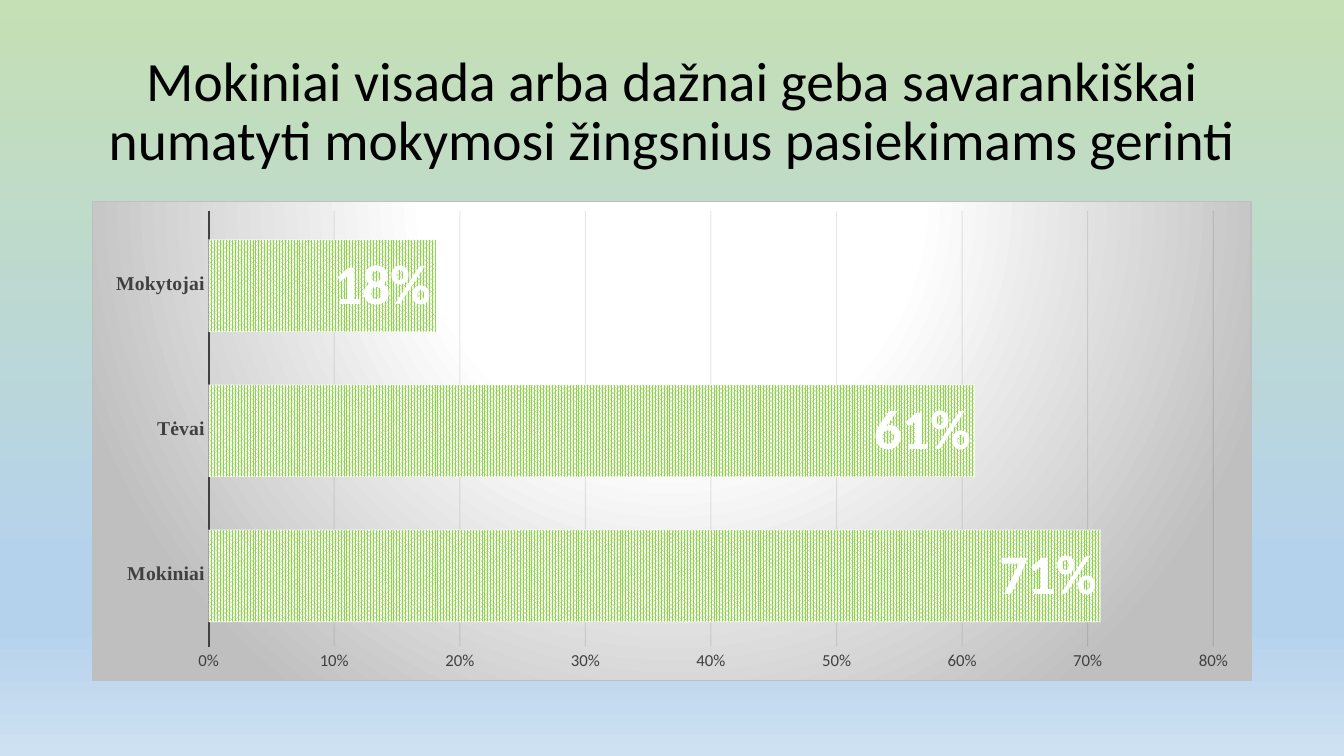
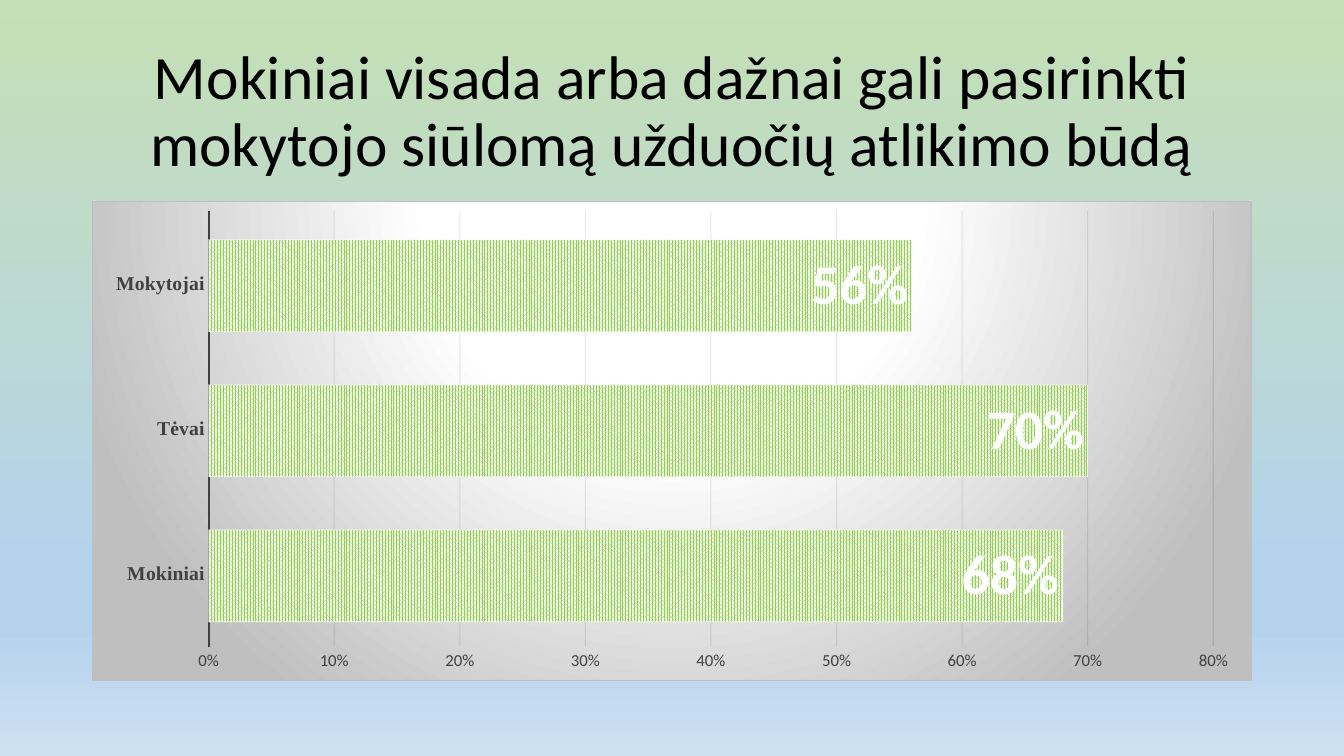
"""Builds two survey slides, each with a title and a bar chart of answers."""
from pptx import Presentation
from pptx import util as u
from pptx.chart.data import CategoryChartData
from pptx.dml.color import RGBColor
from pptx.enum import chart as charts, dml, text
from pptx.oxml import ns, parse_xml

BLACK = RGBColor(0x00, 0x00, 0x00)
WHITE = RGBColor(0xFF, 0xFF, 0xFF)
DARK = RGBColor(0x40, 0x40, 0x40)
GRID = RGBColor(0x0D, 0x0D, 0x0D)
SILVER = RGBColor(0xBF, 0xBF, 0xBF)
LIME = RGBColor(0x92, 0xD0, 0x50)
ORANGE = RGBColor(0xED, 0x7D, 0x31)
GREY = RGBColor(0xA5, 0xA5, 0xA5)
PALE_GREEN = RGBColor(0xC5, 0xE0, 0xB4)
SKY = RGBColor(0xB5, 0xD2, 0xEC)
PALE_SKY = RGBColor(0xCE, 0xE1, 0xF2)

BODY_FONT = "Calibri"
CATEGORY_FONT = "Times New Roman"
PERCENT = "0%"
GROUPS = ("Mokiniai", "Tėvai", "Mokytojai")
LEFT, WIDTH = u.Cm(2.33), u.Cm(29.21)

BACKGROUND_STOPS = ((0, PALE_GREEN), (74, SKY), (83, SKY), (100, PALE_SKY))
BACKGROUND_SHADE = '<a:lin ang="5400000" scaled="1"/>'
CHART_STOPS = ((0, WHITE), (39, WHITE), (100, SILVER))
CHART_SHADE = ('<a:path path="circle"><a:fillToRect l="50000" t="-80000" '
               'r="50000" b="180000"/></a:path>')

SLIDES = (
    ("Mokiniai visada arba dažnai geba savarankiškai numatyti mokymosi "
     "žingsnius pasiekimams gerinti", 39.6, (0.71, 0.61, 0.18)),
    ("Mokiniai visada arba dažnai gali pasirinkti mokytojo siūlomą užduočių "
     "atlikimo būdą", 44, (0.68, 0.7, 0.56)),
)


def gradient(stops, shade):
    stop_xml = "".join(
        f'<a:gs pos="{position * 1000}"><a:srgbClr val="{color}"/></a:gs>'
        for position, color in stops)
    return (f'<a:gradFill {ns.nsdecls("a")} rotWithShape="1">'
            f'<a:gsLst>{stop_xml}</a:gsLst>{shade}</a:gradFill>')


def set_font(font, size, color, bold=False, name=BODY_FONT):
    font.size, font.bold, font.name = u.Pt(size), bold, name
    font.color.rgb = color


def set_line(line, color, width=0.75):
    line.color.rgb = color
    line.width = u.Pt(width)


def set_opacity(chart, location, percent):
    for color in chart.element.xpath(f"{location}//a:srgbClr"):
        color.append(parse_xml(
            f'<a:alpha {ns.nsdecls("a")} val="{percent * 1000}"/>'))


class SurveyDeck:
    def __init__(self):
        self.presentation = Presentation()
        self.presentation.slide_width = u.Cm(33.87)
        self.presentation.slide_height = u.Cm(19.05)
        self.slide = None

    def add_slide(self):
        self.slide = self.presentation.slides.add_slide(
            self.presentation.slide_layouts[6])
        self.slide.background.fill.solid()
        solid = self.slide.element.xpath(".//p:bgPr/a:solidFill")[0]
        solid.getparent().replace(
            solid, parse_xml(gradient(BACKGROUND_STOPS, BACKGROUND_SHADE)))

    def add_title(self, wording, size):
        frame = self.slide.shapes.add_textbox(
            LEFT, u.Cm(1.01), WIDTH, u.Cm(3.68)).text_frame
        frame.word_wrap = True
        frame.vertical_anchor = text.MSO_ANCHOR.MIDDLE
        frame.text = wording
        paragraph = frame.paragraphs[0]
        paragraph.alignment = text.PP_ALIGN.CENTER
        paragraph.line_spacing = 0.9
        set_font(paragraph.runs[0].font, size, BLACK)

    def add_bar_chart(self, values):
        data = CategoryChartData(number_format=PERCENT)
        data.categories = GROUPS
        data.add_series("Series 1", values)
        for name in ("Series 2", "Series 3"):
            data.add_series(name, (None,) * len(GROUPS))
        chart = self.slide.shapes.add_chart(
            charts.XL_CHART_TYPE.BAR_CLUSTERED, LEFT, u.Cm(5.07), WIDTH,
            u.Cm(12.08), data).chart
        chart.has_legend = chart.has_title = False
        set_font(chart.font, 10, BLACK)
        self.style_area(chart)
        self.style_axes(chart)
        self.style_bars(chart.plots[0])
        set_opacity(chart, ".//c:majorGridlines", 10)
        set_opacity(chart, ".//c:ser/c:spPr/a:ln", 50)
        set_opacity(chart, ".//c:ser/c:spPr/a:solidFill", 85)

    def style_area(self, chart):
        chart.element.xpath("c:chart")[0].addnext(parse_xml(
            f'<c:spPr {ns.nsdecls("c", "a")}>'
            f'{gradient(CHART_STOPS, CHART_SHADE)}<a:ln w="{u.Pt(0.75)}">'
            f'<a:solidFill><a:srgbClr val="{SILVER}"/></a:solidFill></a:ln>'
            '</c:spPr>'))

    def style_axes(self, chart):
        for axis in (chart.category_axis, chart.value_axis):
            axis.major_tick_mark = charts.XL_TICK_MARK.NONE
            axis.minor_tick_mark = charts.XL_TICK_MARK.NONE
        category, value = chart.category_axis, chart.value_axis
        set_font(category.tick_labels.font, 14, DARK, True, CATEGORY_FONT)
        set_line(category.format.line, DARK, 1.5)
        set_font(value.tick_labels.font, 12, DARK)
        value.tick_labels.number_format = PERCENT
        value.tick_labels.number_format_is_linked = False
        value.minimum_scale, value.maximum_scale = 0, 0.8
        value.major_unit = 0.1
        value.format.line.fill.background()
        set_line(value.major_gridlines.format.line, GRID)

    def style_bars(self, plot):
        plot.gap_width, plot.overlap = 54, 98
        plot.vary_by_categories = False
        styles = ((LIME, 40), (ORANGE, 12), (GREY, 12))
        for series, (color, label_size) in zip(plot.series, styles):
            fill = series.format.fill
            if color == LIME:
                fill.patterned()
                fill.pattern = dml.MSO_PATTERN.PERCENT_80
                fill.back_color.rgb = WHITE
            else:
                fill.solid()
            fill.fore_color.rgb = color
            set_line(series.format.line, WHITE)
            labels = series.data_labels
            labels.show_value = True
            labels.position = charts.XL_LABEL_POSITION.INSIDE_END
            labels.number_format = PERCENT
            labels.number_format_is_linked = False
            set_font(labels.font, label_size, WHITE, True)


def main():
    deck = SurveyDeck()
    for wording, size, values in SLIDES:
        deck.add_slide()
        deck.add_title(wording, size)
        deck.add_bar_chart(values)
    deck.presentation.save("out.pptx")


if __name__ == "__main__":
    main()
